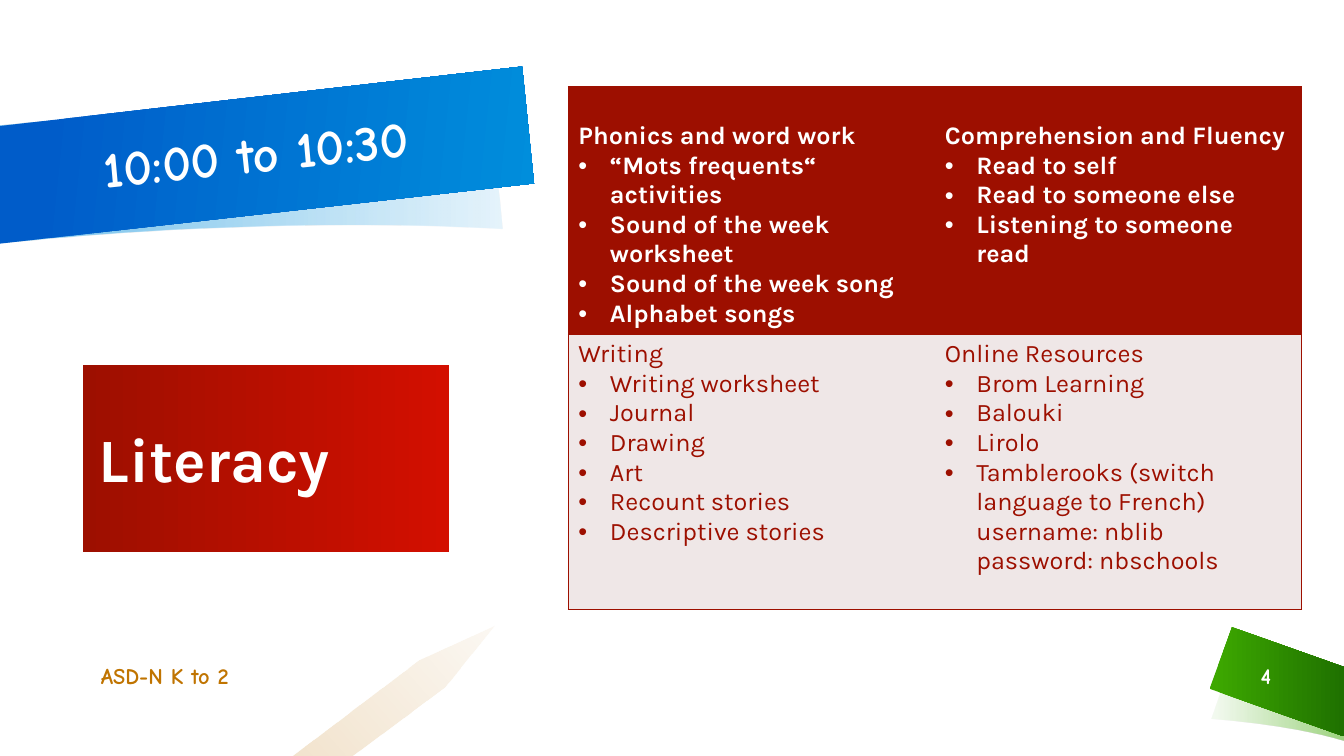
from lxml.etree import SubElement
from pptx import Presentation
from pptx.dml.color import RGBColor
from pptx.enum.text import MSO_ANCHOR, MSO_AUTO_SIZE, PP_ALIGN
from pptx.oxml.ns import qn
from pptx.util import Pt

HUES = {
    "white": "FFFFFF", "wine": "9D0F00", "red": "D30F00", "blush": "EFE7E7",
    "navy": "005CC9", "sky": "008EDC", "leaf": "3DA800", "moss": "1F7100",
    "ochre": "C07400",
}
HAND, SANS = "Comic Neue", "Karla"
HEADS = [
    [("Phonics and word work",
      ["“Mots frequents“ activities", "Sound of the week worksheet",
       "Sound of the week song", "Alphabet songs"]),
     ("Comprehension and Fluency",
      ["Read to self", "Read to someone else", "Listening to someone read"])],
    [("Writing",
      ["Writing worksheet", "Journal", "Drawing", "Art", "Recount stories",
       "Descriptive stories"]),
     ("Online Resources",
      ["Brom Learning", "Balouki", "Lirolo",
       "Tamblerooks (switch language to French)\nusername: nblib\npassword: nbschools"])],
]


def tint(name):
    return RGBColor.from_string(HUES[name])


def shade(shape, stops, angle):
    shape.fill.gradient()
    shape.fill.gradient_angle = (360 - angle) % 360
    for stop, (place, hue, _) in zip(shape.fill.gradient_stops, stops):
        stop.position = place / 100
        stop.color.rgb = tint(hue)
    nodes = shape._element.spPr.iter(qn("a:srgbClr"))
    for node, (_, _, alpha) in zip(list(nodes), stops):
        if alpha < 100:
            SubElement(node, qn("a:alpha"), val=str(alpha * 1000))


def curve(start, bend, steps=16):
    ends = [start, bend[:2], bend[2:4], bend[4:]]
    for step in range(1, steps + 1):
        t = step / steps
        parts = ((1 - t) ** 3, 3 * t * (1 - t) ** 2, 3 * t * t * (1 - t), t ** 3)
        yield tuple(sum(w * p[axis] for w, p in zip(parts, ends)) for axis in (0, 1))


def outline(slide, box, path, stops, angle):
    dots = [path[0]]
    for part in path[1:]:
        dots += [part] if len(part) == 2 else list(curve(dots[-1], part))
    spots = [(Pt(box[0] + x), Pt(box[1] + y)) for x, y in dots]
    pen = slide.shapes.build_freeform(*spots[0])
    pen.add_line_segments(spots[1:], close=True)
    shape = pen.convert_to_shape()
    shape.shadow.inherit = False
    shape.line.fill.background()
    shade(shape, stops, angle)


def style(run, face, size, hue, bold=True):
    font = run.font
    font.name, font.size, font.bold = face, Pt(size), bold
    font.color.rgb = tint(hue)


def fit(shape, box):
    shape.left, shape.top, shape.width, shape.height = map(Pt, box)


def inset(frame, sides):
    (frame.margin_left, frame.margin_top,
     frame.margin_right, frame.margin_bottom) = map(Pt, sides)


def write(shape, text, face, size, hue, align=PP_ALIGN.LEFT):
    frame = shape.text_frame
    frame.word_wrap = True
    frame.auto_size = MSO_AUTO_SIZE.NONE
    frame.vertical_anchor = MSO_ANCHOR.MIDDLE
    para = frame.paragraphs[0]
    para.alignment = align
    para.space_before = Pt(0)
    run = para.add_run()
    run.text = text
    style(run, face, size, hue)
    return para


def banner(slide, box):
    outline(slide, box,
            [(359, 117.5), (350.5, 35.5), (350.5, 35.5, 225.5, 21.5, 0, 44),
             (0, 127.5), (206, 106.5, 359, 117.5, 359, 117.5)],
            [(0, "sky", 10), (88, "sky", 50)], 180)
    outline(slide, box, [(0, 128), (381.5, 85), (373, 1.5), (0, 44)],
            [(9, "navy", 100), (100, "sky", 100)], 6)
    title = slide.shapes.title
    slide.shapes._spTree.append(title._element)
    fit(title, (box[0] + 66, box[1] + 20, 312, 83.5))
    title.rotation = 354
    write(title, "10:00 to 10:30", HAND, 36, "white").line_spacing = 0.9


def topic(slide, box):
    body = slide.placeholders[1]
    fit(body, box)
    shade(body, [(0, "red", 100), (100, "wine", 100)], 180)
    inset(body.text_frame, (11.5, 14.5, 8.5, 8.5))
    para = write(body, "Literacy", SANS, 44, "white")
    para.line_spacing = 0.9
    props = para._p.get_or_add_pPr()
    props.set("marL", "0")
    props.set("indent", "0")
    SubElement(props, qn("a:buNone"))


def corner(slide, box):
    outline(slide, box,
            [(1.5, 66.5), (1.5, 66.5, 56, 70, 96, 82), (96, 34),
             (52, 22, 17, 22, 17, 22)],
            [(3, "leaf", 6), (100, "leaf", 50)], 0)
    outline(slide, box, [(96, 29.5), (16, 1), (0, 45), (96, 79)],
            [(3, "leaf", 100), (100, "moss", 100)], 0)
    label = slide.shapes.add_textbox(*map(Pt, (box[0] + 15, box[1] + 21, 50.5, 29)))
    write(label, "4", HAND, 16, "white", PP_ALIGN.CENTER)


def pencil(slide, box):
    outline(slide, box, [(144, 0), (90, 25), (0, 93.5), (43, 93.5), (108.5, 44.5)],
            [(0, "ochre", 5), (100, "ochre", 20)], 139)


def footer(slide, box):
    label = slide.shapes.add_textbox(*map(Pt, box))
    inset(label.text_frame, (0, 3.6, 7.2, 3.6))
    write(label, "ASD-N K to 2", HAND, 16, "ochre")


def edge(cell, sides):
    props = cell._tc.get_or_add_tcPr()
    for side in "LRTB":
        line = SubElement(props, qn("a:ln" + side), w=str(Pt(1)))
        if side in sides:
            fill = SubElement(line, qn("a:solidFill"))
            SubElement(fill, qn("a:srgbClr"), val=HUES["wine"])
        else:
            SubElement(line, qn("a:noFill"))


def bullet(para):
    props = para._p.get_or_add_pPr()
    props.set("marL", str(Pt(22.5)))
    props.set("indent", str(-Pt(22.5)))
    SubElement(props, qn("a:buFont"), typeface="Arial")
    SubElement(props, qn("a:buChar"), char="•")


def fill(cell, head, items, hue, bold):
    frame = cell.text_frame
    for rank, text in enumerate([head] + items):
        para = frame.add_paragraph() if rank else frame.paragraphs[0]
        if rank:
            bullet(para)
        for turn, line in enumerate(text.split("\n")):
            if turn:
                para.add_line_break()
            run = para.add_run()
            run.text = line
            style(run, SANS, 18, hue, bold)


def grid(slide, box):
    table = slide.shapes.add_table(2, 2, *map(Pt, box)).table
    table.first_row = table.horz_banding = False
    for row, tall in zip(table.rows, (177, box[3] - 177)):
        row.height = Pt(tall)
    for r, cells in enumerate(HEADS):
        for c, (head, items) in enumerate(cells):
            cell = table.cell(r, c)
            edge(cell, "TB" + "LR"[c])
            cell.fill.solid()
            cell.fill.fore_color.rgb = tint("blush" if r else "wine")
            cell.margin_top = Pt(3.6 if r else 24.8)
            fill(cell, head, items, "wine" if r else "white", not r)


def main():
    deck = Presentation()
    deck.slide_width, deck.slide_height = Pt(960), Pt(540)
    slide = deck.slides.add_slide(deck.slide_layouts[1])
    corner(slide, (864, 447))
    banner(slide, (0, 46))
    pencil(slide, (209, 446.5))
    topic(slide, (59, 260.5, 262, 134))
    footer(slide, (72, 468, 208, 29))
    grid(slide, (406, 62, 523.5, 373.5))
    deck.save("out.pptx")


if __name__ == "__main__":
    main()
